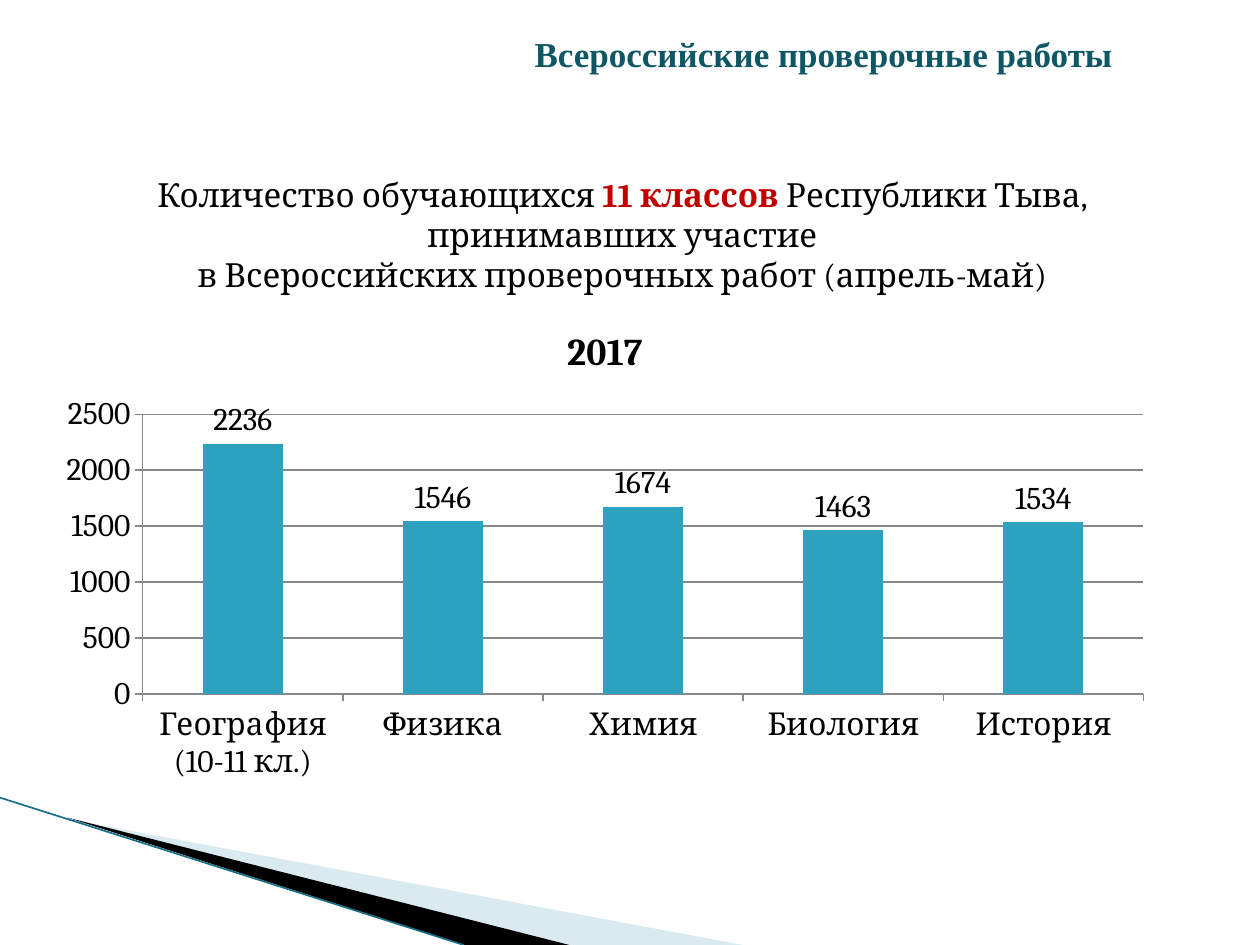
from lxml import etree
from pptx import Presentation
from pptx.chart.data import CategoryChartData
from pptx.dml.color import RGBColor
from pptx.enum.chart import XL_CHART_TYPE as ChartType, XL_LABEL_POSITION as LabelPos
from pptx.enum.chart import XL_TICK_MARK as Tick
from pptx.enum.shapes import MSO_CONNECTOR as Connector
from pptx.enum.text import MSO_ANCHOR as Anchor, PP_ALIGN as Align
from pptx.oxml.ns import qn
from pptx.util import Cm, Pt

THEME = {
    "heading": {"name": "Times New Roman", "size": 20, "color": "105766", "bold": True},
    "body": {"name": "Cambria", "size": 19, "color": "000000", "bold": False},
    "accent": {"name": "Cambria", "size": 19, "color": "C00000", "bold": True},
    "chart": {"name": "Cambria", "size": 18, "color": "000000", "bold": False},
    "chart_title": {"name": "Cambria", "size": 21.6, "color": "000000", "bold": True},
    "bar": "2DA2BF",
    "axis": "878787",
    "pale": "A0CBDC",
    "dark": "000000",
    "edge": "17708A",
}

HEADING = "Всероссийские проверочные работы"
SUBTITLE = [
    [("Количество обучающихся ", "body"), ("11 классов ", "accent"),
     ("Республики Тыва,", "body")],
    [("принимавших участие", "body")],
    [("в Всероссийских проверочных работ (апрель-май)", "body")],
]
YEAR = "2017"
PUPILS = {
    "География (10-11 кл.)": 2236,
    "Физика": 1546,
    "Химия": 1674,
    "Биология": 1463,
    "История": 1534,
}

# Boxes are left, top, width, height in centimetres
HEADING_BOX = (8.5, 0.53, 16.21, 1.12)
SUBTITLE_BOX = (0, 3.38, 25.1, 2.69)
CHART_BOX = (0.89, 6.12, 22.61, 9.8)
WEDGES = [
    ("pale", 0.4, (1.98, 13.89, 10.57, 4.01),
     [(1.4, 16.52), (14.98, 19.05), (11.5, 19.05)]),
    ("dark", 1, (-0.15, 16.08, 10.57, 2.34),
     [(1.35, 16.48), (11.48, 19.05), (9.37, 19.05)]),
]
EDGE = (0, 16.08, 9.35, 19.05)


def cm(values):
    return [Cm(v) for v in values]


def rgb(key):
    return RGBColor.from_string(THEME[key])


def style(font, key):
    for attr, value in THEME[key].items():
        if attr == "color":
            font.color.rgb = RGBColor.from_string(value)
        else:
            setattr(font, attr, Pt(value) if attr == "size" else value)


def place(s, box):
    s.left, s.top, s.width, s.height = cm(box)


def write(tf, paragraphs, anchor):
    tf.word_wrap = True
    tf.vertical_anchor = anchor
    for i, runs in enumerate(paragraphs):
        p = tf.add_paragraph() if i else tf.paragraphs[0]
        p.alignment = Align.CENTER
        for text, key in runs:
            r = p.add_run()
            r.text = text
            style(r.font, key)


def reframe(s, box):
    """Give a freeform the frame box and leave its outline where it is."""
    dx, dy = s.left - Cm(box[0]), s.top - Cm(box[1])
    place(s, box)
    outline = s._element.spPr.find(".//" + qn("a:path"))
    outline.set("w", str(s.width))
    outline.set("h", str(s.height))
    for pt in outline.iter(qn("a:pt")):
        pt.set("x", str(int(pt.get("x")) + dx))
        pt.set("y", str(int(pt.get("y")) + dy))


def add_corner(shapes):
    """Draw the wedges and the edge line in the lower left corner."""
    for key, opacity, box, points in WEDGES:
        start, *rest = [cm(point) for point in points]
        builder = shapes.build_freeform(*start)
        builder.add_line_segments(rest)
        s = builder.convert_to_shape()
        reframe(s, box)
        s.shadow.inherit = False
        s.line.fill.background()
        s.fill.solid()
        s.fill.fore_color.rgb = rgb(key)
        if opacity < 1:
            color = s.fill._xPr.find(".//" + qn("a:srgbClr"))
            etree.SubElement(color, qn("a:alpha"), val=str(round(opacity * 100000)))
    line = shapes.add_connector(Connector.STRAIGHT, *cm(EDGE))
    line.line.color.rgb = rgb("edge")
    line.line.width = Pt(0.95)
    etree.SubElement(line._element.spPr, qn("a:effectLst"))


def add_pupil_chart(shapes):
    data = CategoryChartData()
    data.categories = list(PUPILS)
    data.add_series(YEAR, list(PUPILS.values()))
    chart = shapes.add_chart(ChartType.COLUMN_CLUSTERED, *cm(CHART_BOX), data).chart
    style(chart.font, "chart")
    chart.has_legend = False
    chart.has_title = True
    r = chart.chart_title.text_frame.paragraphs[0].add_run()
    r.text = YEAR
    style(r.font, "chart_title")

    plot = chart.plots[0]
    plot.gap_width = 150
    plot.vary_by_categories = False
    plot.has_data_labels = True
    plot.data_labels.show_value = True
    plot.data_labels.position = LabelPos.OUTSIDE_END
    fill = plot.series[0].format.fill
    fill.solid()
    fill.fore_color.rgb = rgb("bar")

    values = chart.value_axis
    values.minimum_scale, values.maximum_scale, values.major_unit = 0, 2500, 500
    values.has_major_gridlines = True
    for axis in (chart.category_axis, values):
        axis.major_tick_mark = Tick.OUTSIDE
        axis.minor_tick_mark = Tick.NONE
    for part in (chart.category_axis, values, values.major_gridlines):
        part.format.line.color.rgb = rgb("axis")
        part.format.line.width = Pt(0)


def main():
    prs = Presentation()
    prs.slide_width, prs.slide_height = cm((25.4, 19.05))
    slide = prs.slides.add_slide(prs.slide_layouts[5])
    shapes = slide.shapes
    add_corner(shapes)

    title = shapes.title
    place(title, HEADING_BOX)
    write(title.text_frame, [[(HEADING, "heading")]], Anchor.TOP)

    subtitle = shapes.add_textbox(*cm(SUBTITLE_BOX))
    write(subtitle.text_frame, SUBTITLE, Anchor.MIDDLE)
    add_pupil_chart(shapes)
    prs.save("out.pptx")


if __name__ == "__main__":
    main()
